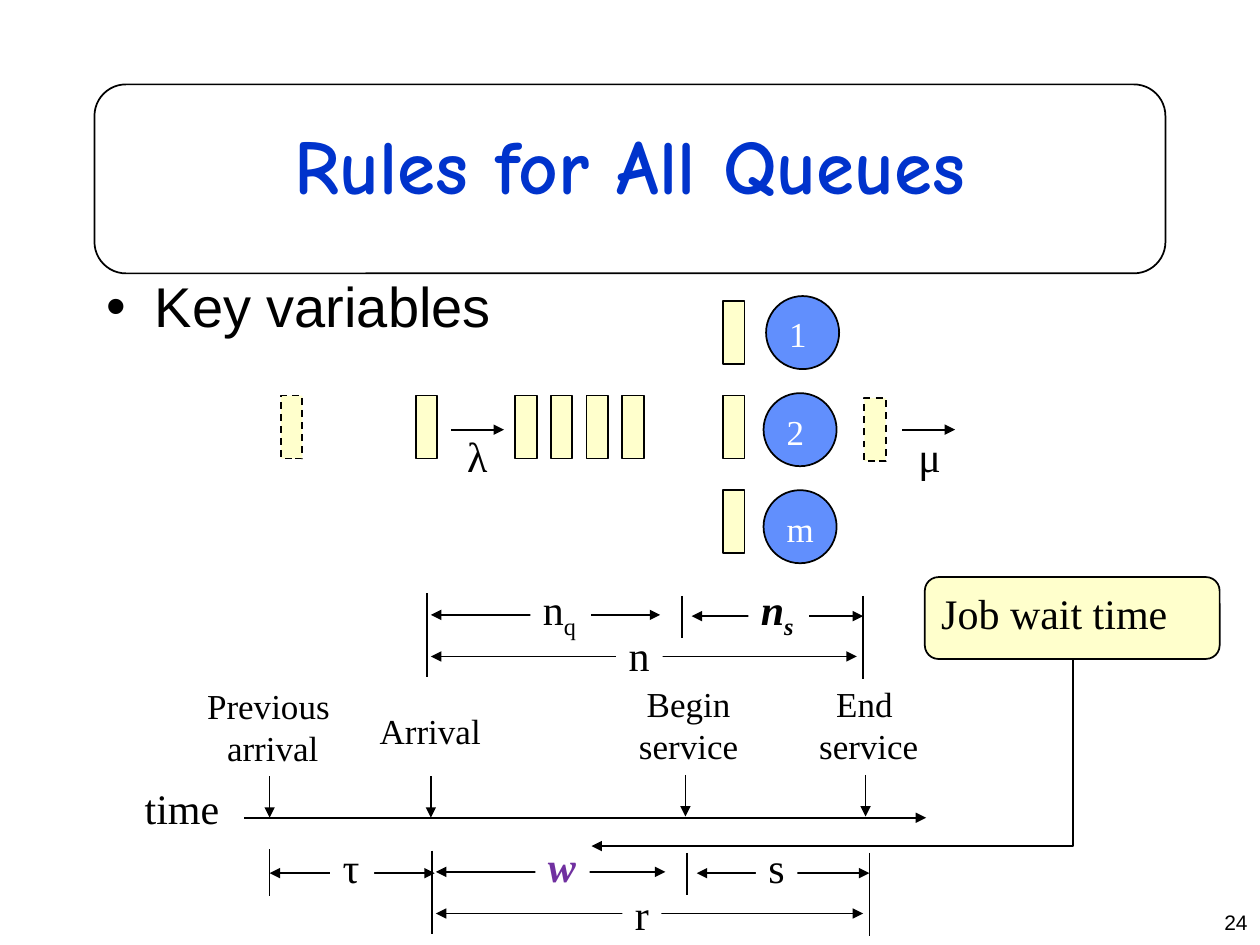
from pptx import Presentation
from pptx.dml.color import RGBColor
from pptx.enum.dml import MSO_LINE
from pptx.enum.shapes import MSO_CONNECTOR, MSO_SHAPE
from pptx.enum.text import MSO_ANCHOR, PP_ALIGN
from pptx.oxml.ns import qn
from pptx.util import Cm, Pt
from lxml.etree import SubElement

COLORS = {"ink": "000000", "title": "0033CC", "job": "FFFFCC", "server": "618FFD",
          "paper": "FFFFFF", "wait": "7030A0"}
SERIF = {"name": "Times New Roman", "size": Pt(24)}
SMALL_SERIF = {**SERIF, "size": Pt(20)}
EMPHASIS = {**SERIF, "bold": True, "italic": True}
CENTER = {"alignment": PP_ALIGN.CENTER}


def inch(value):
    """Length on the slide's inch grid, given in centimetres."""
    return Cm(value * 2.54)


def rgb(color):
    return RGBColor.from_string(COLORS[color])


def apply(target, values):
    for name, value in values.items():
        setattr(target, name, value)


def write(holder, text, font, color="ink", paragraph=None, wrap=True,
          anchor=MSO_ANCHOR.TOP, subscript=""):
    frame = holder.text_frame
    apply(frame, {"text": text, "word_wrap": wrap, "vertical_anchor": anchor})
    if subscript:
        lowered = frame.paragraphs[0].add_run()
        lowered.text = subscript
        lowered.font._element.set("baseline", "-25000")
    for line in frame.paragraphs:
        apply(line, {"alignment": PP_ALIGN.LEFT, **(paragraph or {})})
        for run in line.runs:
            apply(run.font, font)
            run.font.color.rgb = rgb(color)
    return holder


def add_text(slide, box, text, font, **options):
    return write(slide.shapes.add_textbox(*map(inch, box)), text, font, **options)


def add_box(slide, kind, box, fill=None, outlined=True, dashed=False):
    shape = slide.shapes.add_shape(kind, *map(inch, box))
    shape.shadow.inherit = False
    if fill:
        shape.fill.solid()
        shape.fill.fore_color.rgb = rgb(fill)
    else:
        shape.fill.background()
    if outlined:
        shape.line.color.rgb = rgb("ink")
        shape.line.width = Pt(1)
    else:
        shape.line.fill.background()
    if dashed:
        shape.line.dash_style = MSO_LINE.DASH
    return shape


def add_line(slide, start, end, heads=(), kind=MSO_CONNECTOR.STRAIGHT):
    """Line with triangles at the ends named in heads (headEnd, tailEnd)."""
    line = slide.shapes.add_connector(kind, *map(inch, (*start, *end)))
    line.line.color.rgb = rgb("ink")
    line.line.width = Pt(1)
    for head in heads:
        SubElement(line.line._get_or_add_ln(), qn(f"a:{head}"), type="triangle")
    SubElement(line._element.spPr, qn("a:effectLst"))
    return line


def add_arrow(slide, start, end):
    return add_line(slide, start, end, ("tailEnd",))


def add_span(slide, left, right, y):
    return add_line(slide, (left, y), (right, y), ("headEnd", "tailEnd"))


def add_tick(slide, x, top, height):
    return add_line(slide, (x, top), (x, top + height))


def add_label(slide, left, top, width, text, font=SERIF, color="ink", subscript=""):
    """Label on a white patch that breaks the line behind it."""
    patch = add_box(slide, MSO_SHAPE.RECTANGLE, (left, top, width, 0.5), "paper", False)
    return write(patch, text, font, color=color, wrap=False, subscript=subscript)


def add_heading(slide):
    add_box(slide, MSO_SHAPE.ROUNDED_RECTANGLE, (0.75, 0.67, 8.5, 1.5))
    add_text(slide, (0.75, 0.67, 8.5, 1.25), "Rules for All Queues",
             {"name": "Comic Neue", "size": Pt(44), "bold": True}, color="title",
             paragraph=CENTER, anchor=MSO_ANCHOR.MIDDLE)
    topic = add_text(slide, (0.75, 2.17, 8.5, 4.5), "Key variables",
                     {"name": "Arial", "size": Pt(32)},
                     paragraph={"line_spacing": 0.9, "space_before": Pt(6.4)})
    properties = topic.text_frame.paragraphs[0]._p.get_or_add_pPr()
    properties.set("marL", str(inch(0.38)))
    properties.set("indent", str(-inch(0.38)))
    SubElement(properties, qn("a:buFont"), typeface="Arial")
    SubElement(properties, qn("a:buChar"), char="•")
    add_text(slide, (9.25, 7.17, 0.75, 0.33), "24", {"name": "Arial", "size": Pt(12)},
             paragraph={"alignment": PP_ALIGN.RIGHT})


def add_queue(slide):
    row = 3.14
    waiting = [(4.09 + 0.283 * place, row, False) for place in range(4)]
    in_service = [(5.74, row + 0.75 * step, False) for step in (-1, 0, 1)]
    jobs = [(2.23, row, True), (3.3, row, False), *waiting, *in_service, (6.86, 3.16, True)]
    for left, top, dashed in jobs:
        add_box(slide, MSO_SHAPE.RECTANGLE, (left, top, 0.17, 0.5), "job", dashed=dashed)
    for place, (name, left) in enumerate((("1", 6.08), ("2", 6.06), ("m", 6.06))):
        server = add_box(slide, MSO_SHAPE.OVAL, (left, 2.35 + 0.77 * place, 0.58, 0.58), "server")
        write(server, name, SMALL_SERIF, color="paper")
    for rate, left in (("λ", 3.58), ("μ", 7.16)):
        add_arrow(slide, (left, 3.41), (left + 0.42, 3.41))
        add_text(slide, (left + 0.03, 3.37, 0.39, 0.5), rate, SERIF, wrap=False)


def add_measures(slide, start, begin, end, top):
    """Ticks and spans for the wait, the service and the two together."""
    add_tick(slide, start, top, 0.66)
    add_tick(slide, begin, top + 0.02, 0.33)
    add_tick(slide, end, top + 0.02, 0.66)
    add_span(slide, start + 0.03, end - 0.05, top + 0.5)
    add_span(slide, begin + 0.08, end, top + 0.18)
    add_span(slide, start + 0.03, begin - 0.17, top + 0.17)


def add_timeline(slide):
    add_arrow(slide, (1.94, 6.49), (7.35, 6.49))
    add_label(slide, 1.05, 6.16, 0.8, "time")
    events = (("Previous \narrival", (1.54, 5.38, 1.25, 0.77), 2.14, 6.16),
              ("Arrival", (2.91, 5.58, 1.01, 0.44), 3.42, 6.16),
              ("Begin\nservice", (4.97, 5.37, 0.99, 0.77), 5.44, 6.15),
              ("End \nservice", (6.4, 5.37, 0.99, 0.77), 6.87, 6.15))
    for event, box, x, top in events:
        add_text(slide, box, event, SMALL_SERIF, paragraph=CENTER, wrap=False)
        add_arrow(slide, (x, top), (x, top + 0.33))


def add_callout(slide):
    callout = add_box(slide, MSO_SHAPE.ROUNDED_RECTANGLE, (7.34, 4.58, 2.34, 0.65), "job")
    write(callout, "Job wait time", SERIF)
    # A quarter turn leads the elbow down from the callout, then left to w
    elbow = add_line(slide, (5.86, 4.06), (7.35, 7.88), ("tailEnd",), MSO_CONNECTOR.ELBOW)
    properties = elbow._element.spPr
    properties.find(qn("a:xfrm")).set("rot", str(90 * 60000))
    properties.find(qn("a:prstGeom")).set("prst", "bentConnector2")


def main():
    deck = Presentation()
    deck.slide_width, deck.slide_height = inch(10), inch(7.5)
    slide = deck.slides.add_slide(deck.slide_layouts[6])
    add_heading(slide)
    add_queue(slide)

    add_measures(slide, 3.39, 5.41, 6.85, 4.71)
    add_label(slide, 4.89, 4.95, 0.37, "n")
    add_label(slide, 4.21, 4.58, 0.48, "n", subscript="q")
    add_label(slide, 5.94, 4.58, 0.48, "n", EMPHASIS, subscript="s")

    add_timeline(slide)
    add_measures(slide, 3.43, 5.45, 6.9, 6.75)
    add_label(slide, 4.94, 7, 0.31, "r")
    add_label(slide, 4.25, 6.62, 0.43, "w", EMPHASIS, "wait")
    add_label(slide, 6, 6.63, 0.33, "s")

    add_tick(slide, 2.14, 6.74, 0.37)
    add_span(slide, 2.14, 3.45, 6.93)
    add_label(slide, 2.62, 6.63, 0.35, "τ")
    add_callout(slide)
    deck.save("out.pptx")


if __name__ == "__main__":
    main()
